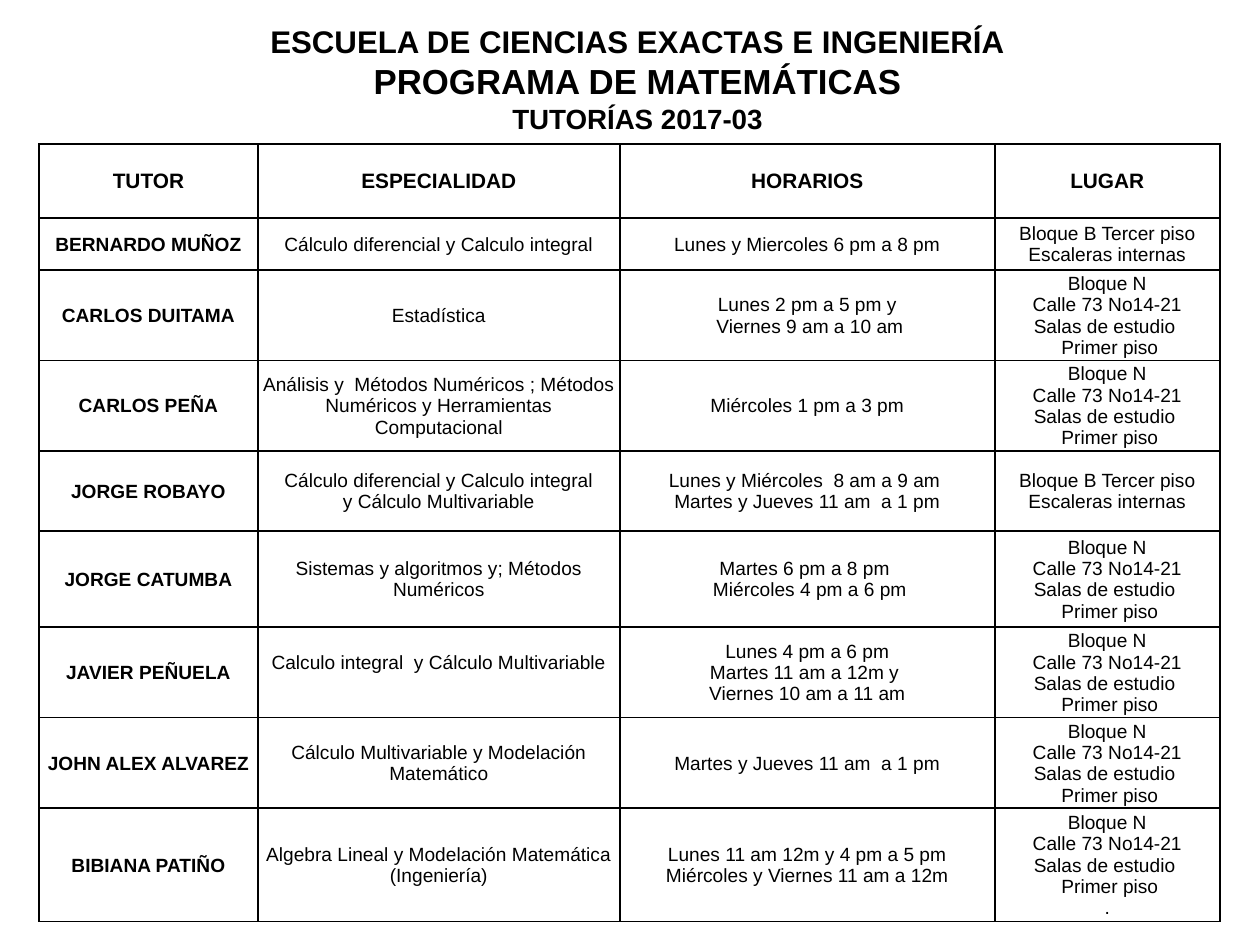
from lxml import etree
from pptx import Presentation
from pptx import util as u
from pptx.dml.color import RGBColor
from pptx.enum import text
from pptx.oxml import ns

BLACK, WHITE = "000000", "FFFFFF"
BLOCK_B = "Bloque B Tercer piso Escaleras internas"
BLOCK_N = "Bloque N\nCalle 73 No14-21\nSalas de estudio \n Primer piso"

TITLE_LINES = [
    ("ESCUELA DE CIENCIAS EXACTAS E INGENIERÍA", 18),
    ("PROGRAMA DE MATEMÁTICAS", 20),
    ("TUTORÍAS 2017-03", 16),
]
COLUMN_WIDTHS = [126, 208.5, 216, 129.6]
SCHEDULE = [
    (42.8, "TUTOR", "ESPECIALIDAD", "HORARIOS", "LUGAR"),
    (29.8, "BERNARDO MUÑOZ", "Cálculo diferencial y Calculo integral",
     "Lunes y Miercoles 6 pm a 8 pm", BLOCK_B),
    (52.1, "CARLOS DUITAMA", "Estadística",
     "Lunes 2 pm a 5 pm y\n Viernes 9 am a 10 am", BLOCK_N),
    (52.1, "CARLOS PEÑA",
     "Análisis y  Métodos Numéricos ; Métodos Numéricos y Herramientas Computacional",
     "Miércoles 1 pm a 3 pm", BLOCK_N),
    (46.1, "JORGE ROBAYO",
     "Cálculo diferencial y Calculo integral\ny Cálculo Multivariable",
     "Lunes y Miércoles  8 am a 9 am \nMartes y Jueves 11 am  a 1 pm", BLOCK_B),
    (55.5, "JORGE CATUMBA", "Sistemas y algoritmos y; Métodos Numéricos",
     "Martes 6 pm a 8 pm \n Miércoles 4 pm a 6 pm", BLOCK_N),
    (52.1, "JAVIER PEÑUELA", "Calculo integral  y Cálculo Multivariable",
     "Lunes 4 pm a 6 pm\nMartes 11 am a 12m y \nViernes 10 am a 11 am", BLOCK_N),
    (52.1, "JOHN ALEX ALVAREZ", "Cálculo Multivariable y Modelación Matemático",
     "Martes y Jueves 11 am  a 1 pm", BLOCK_N),
    (65.3, "BIBIANA PATIÑO", "Algebra Lineal y Modelación Matemática (Ingeniería)",
     "Lunes 11 am 12m y 4 pm a 5 pm\nMiércoles y Viernes 11 am a 12m", BLOCK_N + "\n."),
]
RAISED_CELL = (6, 1)


def color(value):
    return RGBColor.from_string(value)


def write(paragraph, words, size=11, bold=False, fill=BLACK):
    paragraph.alignment = text.PP_ALIGN.CENTER
    run = paragraph.add_run()
    run.text = words
    run.font.name = "Arial"
    run.font.size = u.Pt(size)
    run.font.bold = bold
    run.font.color.rgb = color(fill)


def write_lines(frame, lines, **formats):
    for index, (words, size) in enumerate(lines):
        paragraph = frame.add_paragraph() if index else frame.paragraphs[0]
        write(paragraph, words, size=size, **formats)


def add_borders(cell, width=1, line_color=BLACK):
    properties = cell._tc.get_or_add_tcPr()
    for index, side in enumerate(("lnL", "lnR", "lnT", "lnB")):
        line = etree.Element(ns.qn(f"a:{side}"), w=str(u.Pt(width)))
        fill = etree.SubElement(line, ns.qn("a:solidFill"))
        etree.SubElement(fill, ns.qn("a:srgbClr"), val=line_color)
        properties.insert(index, line)


def place_title(slide, left, top, width, height):
    title = slide.shapes.title
    title.left, title.top = u.Pt(left), u.Pt(top)
    title.width, title.height = u.Pt(width), u.Pt(height)
    frame = title.text_frame
    frame.word_wrap = True
    frame.auto_size = text.MSO_AUTO_SIZE.NONE
    frame.vertical_anchor = text.MSO_ANCHOR.TOP
    write_lines(frame, TITLE_LINES, bold=True)


def format_cell(cell, words, size, bold, bottom):
    cell.margin_left = cell.margin_right = cell.margin_top = u.Pt(0.7)
    cell.margin_bottom = u.Pt(bottom)
    cell.vertical_anchor = text.MSO_ANCHOR.MIDDLE
    cell.fill.solid()
    cell.fill.fore_color.rgb = color(WHITE)
    add_borders(cell)
    write_lines(cell.text_frame, [(line, size) for line in words.split("\n")], bold=bold)


def place_schedule(slide, left, top):
    width = sum(COLUMN_WIDTHS)
    height = sum(entry[0] for entry in SCHEDULE)
    table = slide.shapes.add_table(
        len(SCHEDULE), len(COLUMN_WIDTHS),
        u.Pt(left), u.Pt(top), u.Pt(width), u.Pt(height)).table
    table.first_row = table.horz_banding = False
    for column, column_width in zip(table.columns, COLUMN_WIDTHS):
        column.width = u.Pt(column_width)
    for row, (row_height, *entries) in enumerate(SCHEDULE):
        table.rows[row].height = u.Pt(row_height)
        for column, words in enumerate(entries):
            format_cell(
                table.cell(row, column), words,
                size=11 if row else 12,
                bold=row == 0 or column == 0,
                bottom=12 if (row, column) == RAISED_CELL else 0)


def main():
    presentation = Presentation()
    presentation.slide_width, presentation.slide_height = u.Pt(725.76), u.Pt(540)
    slide = presentation.slides.add_slide(presentation.slide_layouts[5])
    place_title(slide, 8.64, 9.4, 717.1, 72.7)
    place_schedule(slide, 22.5, 82.8)
    presentation.save("out.pptx")


if __name__ == "__main__":
    main()
